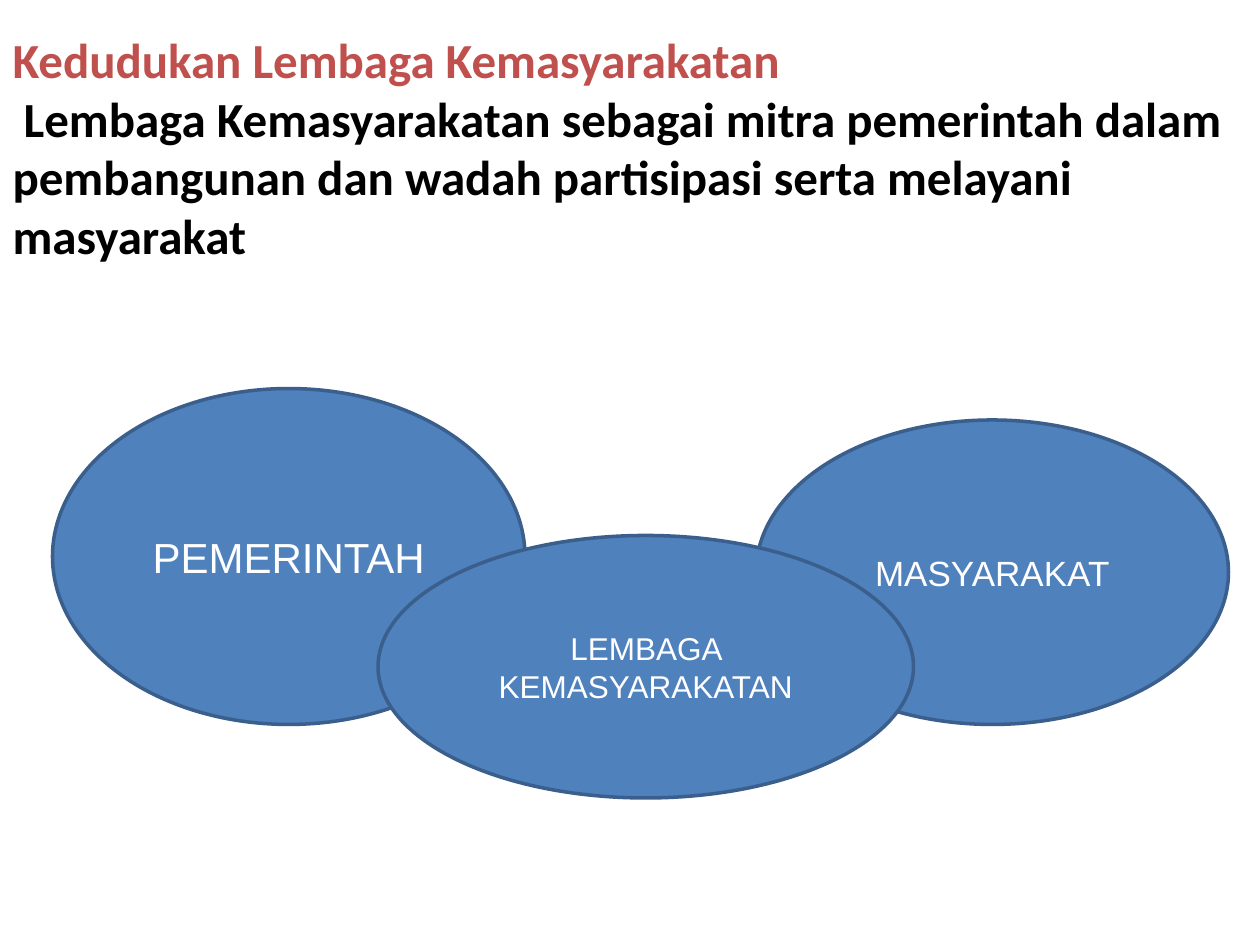
from pptx import Presentation
from pptx.dml.color import RGBColor
from pptx.enum.shapes import MSO_SHAPE
from pptx.enum.text import MSO_ANCHOR, MSO_AUTO_SIZE, PP_ALIGN
from pptx.util import Inches, Pt

OVAL = MSO_SHAPE.OVAL
MIDDLE = MSO_ANCHOR.MIDDLE
NO_FIT = MSO_AUTO_SIZE.NONE
LEFT, CENTER = PP_ALIGN.LEFT, PP_ALIGN.CENTER

RED = RGBColor(0xC0, 0x50, 0x4D)
BLACK = RGBColor(0x00, 0x00, 0x00)
WHITE = RGBColor(0xFF, 0xFF, 0xFF)
BLUE = RGBColor(0x4F, 0x81, 0xBD)
DARK_BLUE = RGBColor(0x3A, 0x5F, 0x8C)

COLUMNS, ROWS = 120, 90
TITLE_ROWS = 28

deck = Presentation()
deck.slide_width = Inches(10)
deck.slide_height = Inches(7.5)
column = deck.slide_width // COLUMNS
row = deck.slide_height // ROWS
page = deck.slides.add_slide(deck.slide_layouts[5])

title = page.shapes.title
title.left, title.top = 0, 0
title.width, title.height = deck.slide_width, TITLE_ROWS * row
frame = title.text_frame
frame.word_wrap = True
frame.auto_size = NO_FIT
frame.vertical_anchor = MIDDLE
para = frame.paragraphs[0]
para.alignment = LEFT
para.font.name = "Calibri"
para.font.size = Pt(28)
para.font.bold = True
heading = para.add_run()
heading.text = "Kedudukan Lembaga Kemasyarakatan"
heading.font.color.rgb = RED
para.add_line_break()
statement = para.add_run()
statement.text = (
    " Lembaga Kemasyarakatan sebagai mitra pemerintah dalam "
    "pembangunan dan wadah partisipasi serta melayani masyarakat"
)
statement.font.color.rgb = BLACK

parties = [
    ("PEMERINTAH", 24, 5, 37, 45, 32),
    ("MASYARAKAT", 20, 72, 40, 45, 29),
    ("LEMBAGA KEMASYARAKATAN", 18, 36, 51, 51, 25),
]
for name, size, left, top, width, height in parties:
    oval = page.shapes.add_shape(
        OVAL, left * column, top * row, width * column, height * row
    )
    oval.shadow.inherit = False
    oval.fill.solid()
    oval.fill.fore_color.rgb = BLUE
    oval.line.color.rgb = DARK_BLUE
    oval.line.width = Pt(2)
    frame = oval.text_frame
    frame.word_wrap = True
    frame.vertical_anchor = MIDDLE
    para = frame.paragraphs[0]
    para.text = name
    para.alignment = CENTER
    para.font.name = "Arial"
    para.font.size = Pt(size)
    para.font.color.rgb = WHITE

deck.save("out.pptx")
